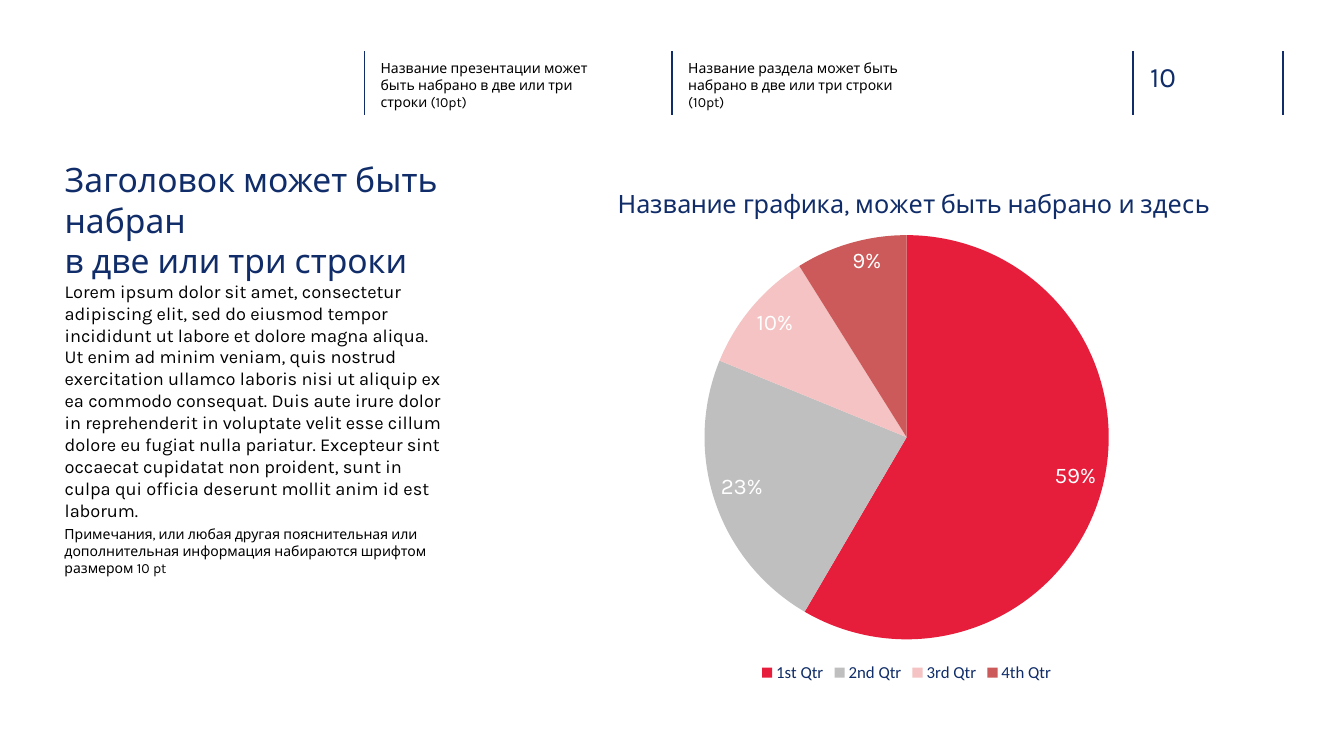
from lxml.etree import SubElement
from pptx import Presentation
from pptx.chart.data import CategoryChartData
from pptx.dml.color import RGBColor
from pptx.enum.chart import XL_CHART_TYPE, XL_LABEL_POSITION, XL_LEGEND_POSITION
from pptx.enum.shapes import MSO_CONNECTOR
from pptx.enum.text import MSO_ANCHOR, MSO_AUTO_SIZE, PP_ALIGN
from pptx.oxml import parse_xml
from pptx.oxml.ns import nsdecls, qn
from pptx.util import Pt

PX = 9525
NAVY = RGBColor(0x10, 0x2D, 0x69)
BLACK = RGBColor(0, 0, 0)
WHITE = RGBColor(0xFF, 0xFF, 0xFF)
RED = RGBColor(0xE6, 0x1E, 0x3C)
GREY = RGBColor(0xBF, 0xBF, 0xBF)
PINK = RGBColor(0xF5, 0xC3, 0xC3)
ROSE = RGBColor(0xCD, 0x5A, 0x5A)

QUARTERS = [("1st Qtr", 59, RED), ("2nd Qtr", 23, GREY),
            ("3rd Qtr", 10, PINK), ("4th Qtr", 9, ROSE)]
LOREM = (
    "Lorem ipsum dolor sit amet, consectetur adipiscing elit, sed do eiusmod tempor "
    "incididunt ut labore et dolore magna aliqua. Ut enim ad minim veniam, quis nostrud "
    "exercitation ullamco laboris nisi ut aliquip ex ea commodo consequat. Duis aute irure "
    "dolor in reprehenderit in voluptate velit esse cillum dolore eu fugiat nulla pariatur. "
    "Excepteur sint occaecat cupidatat non proident, sunt in culpa qui officia deserunt "
    "mollit anim id est laborum.")
NOTE = ("Примечания, или любая другая пояснительная или дополнительная информация "
        "набираются шрифтом размером 10 pt")
HEADERS = [(353, "Название презентации может быть набрано в две или три строки (10pt)"),
           (646, "Название раздела может быть набрано в две или три строки (10pt)")]
RULES = [347, 640, 1079, 1222]


def style_font(font, size, color, name):
    font.size, font.name, font.bold = Pt(size), name, False
    font.color.rgb = color


def write(frame, text, size=10, color=BLACK, font="Karla", align=PP_ALIGN.LEFT):
    paragraph = frame.paragraphs[0]
    paragraph.text = text
    paragraph.alignment = align
    paragraph.space_before = Pt(0)
    for run in paragraph.runs:
        style_font(run.font, size, color, font)


def lay_out(part, index, **fractions):
    """Give a chart part a fixed place, in fractions of the chart area."""
    for automatic in part.findall(qn("c:layout")):
        part.remove(automatic)
    layout = parse_xml(f"<c:layout {nsdecls('c')}><c:manualLayout/></c:layout>")
    modes = {"xMode": "edge", "yMode": "edge"}
    if "w" in fractions:
        modes = {"layoutTarget": "inner", **modes}
    for tag, value in {**modes, **fractions}.items():
        SubElement(layout[0], qn(f"c:{tag}")).set("val", str(value))
    part.insert(index, layout)


class SlideBuilder:
    def __init__(self, slide, body_font="Karla", chart_font="Calibri"):
        self.slide = slide
        self.body_font = body_font
        self.chart_font = chart_font

    def fill_frame(self, shape, box, text, **style):
        shape.left, shape.top, shape.width, shape.height = (n * PX for n in box)
        frame = shape.text_frame
        frame.word_wrap = True
        frame.auto_size = MSO_AUTO_SIZE.SHAPE_TO_FIT_TEXT
        frame.vertical_anchor = MSO_ANCHOR.TOP
        write(frame, text, font=self.body_font, **style)

    def title(self, box, text, **style):
        self.fill_frame(self.slide.shapes.title, box, text, **style)

    def body(self, box, text, **style):
        body = self.slide.placeholders[1]
        properties = body.text_frame.paragraphs[0]._p.get_or_add_pPr()
        properties.set("marL", "0")
        properties.set("indent", "0")
        SubElement(properties, qn("a:buNone"))
        self.fill_frame(body, box, text, **style)

    def text(self, box, text, **style):
        textbox = self.slide.shapes.add_textbox(0, 0, 0, 0)
        self.fill_frame(textbox, box, text, **style)

    def vertical_rule(self, x, top, bottom):
        rule = self.slide.shapes.add_connector(
            MSO_CONNECTOR.STRAIGHT, x * PX, top * PX, x * PX, bottom * PX)
        rule.line.color.rgb = NAVY
        rule.line.width = Pt(1)
        SubElement(rule._element.spPr, qn("a:effectLst"))

    def pie(self, box, heading, slices):
        names, values, colors = zip(*slices)
        data = CategoryChartData()
        data.categories = names
        data.add_series("Series 1", values)
        chart = self.slide.shapes.add_chart(
            XL_CHART_TYPE.PIE, *(n * PX for n in box), data).chart
        style_font(chart.font, 10, BLACK, self.chart_font)

        chart.has_title = True
        write(chart.chart_title.text_frame, heading, size=18, color=NAVY,
              font=self.body_font, align=PP_ALIGN.CENTER)
        chart.has_legend = True
        chart.legend.position = XL_LEGEND_POSITION.BOTTOM
        chart.legend.include_in_layout = False
        style_font(chart.legend.font, 12, NAVY, self.chart_font)

        plot = chart.plots[0]
        plot.vary_by_categories = True
        for index, color in enumerate(colors):
            fill = plot.series[0].points[index].format.fill
            fill.solid()
            fill.fore_color.rgb = color
        plot.has_data_labels = True
        labels = plot.data_labels
        labels.show_value = True
        labels.number_format = '0"%"'
        labels.number_format_is_linked = False
        labels.position = XL_LABEL_POSITION.INSIDE_END
        style_font(labels.font, 16, WHITE, self.body_font)

        root = chart._chartSpace
        lay_out(root.xpath("c:chart/c:title")[0], 1, x=0.11, y=0.04)
        lay_out(root.xpath("c:chart/c:plotArea")[0], 0, x=0.23, y=0.14, w=0.54, h=0.77)


def main():
    presentation = Presentation()
    presentation.slide_width, presentation.slide_height = 1280 * PX, 720 * PX
    layout = presentation.slide_layouts[1]
    builder = SlideBuilder(presentation.slides.add_slide(layout))

    for x in RULES:
        builder.vertical_rule(x, 49, 110)
    for left, header in HEADERS:
        builder.text((left, 52, 247, 42), header)
    builder.text((1086, 52, 70, 42), "10", size=20, color=NAVY)

    builder.title((52, 147, 477, 87), "Заголовок может быть набран\vв две или три строки",
                  size=24, color=NAVY)
    builder.body((52, 262, 381, 220), LOREM, size=13)
    builder.text((52, 496, 375, 59), NOTE)
    builder.pie((505, 154, 717, 500), "Название графика, может быть набрано и здесь", QUARTERS)
    presentation.save("out.pptx")


if __name__ == "__main__":
    main()
